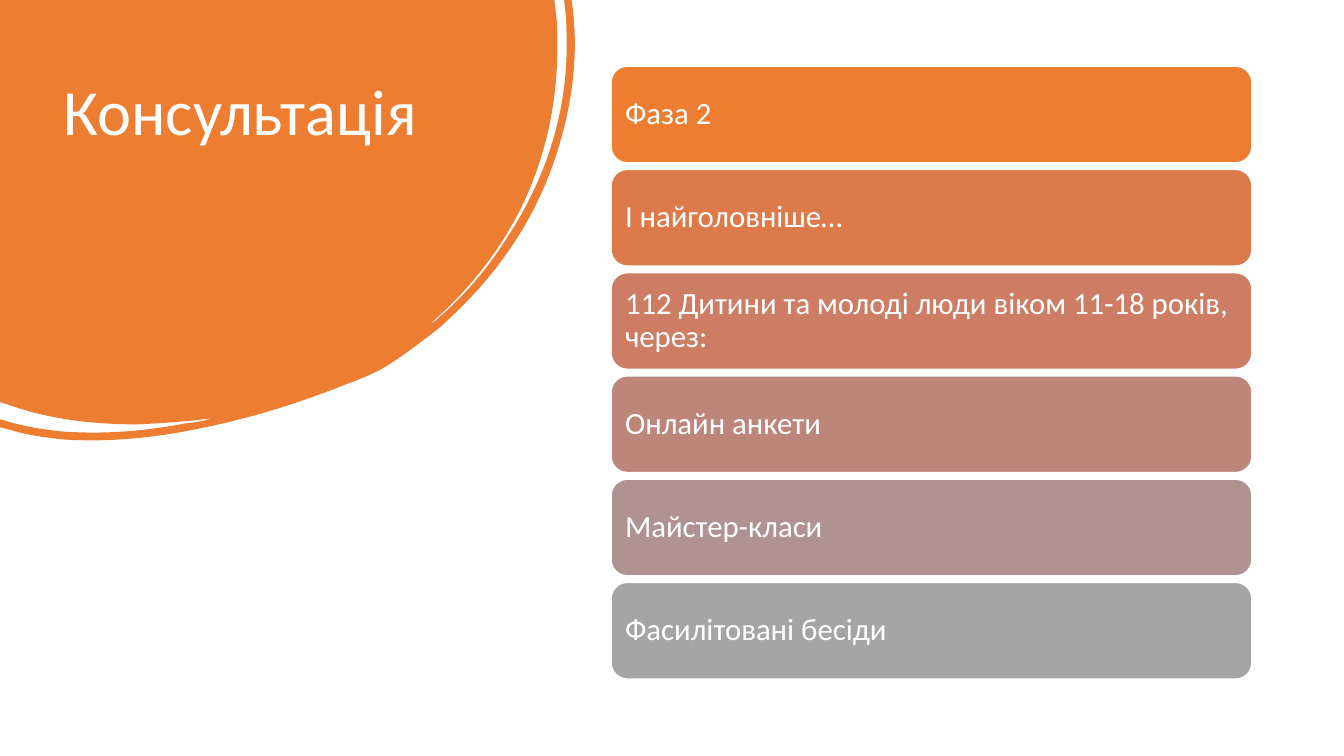
"""Build the consultation slide: a brushed orange corner, a title and a stack of six cards."""
from lxml.etree import SubElement
from pptx import Presentation
from pptx.dml.color import RGBColor
from pptx.enum.shapes import MSO_SHAPE
from pptx.enum.text import MSO_ANCHOR, MSO_AUTO_SIZE, PP_ALIGN
from pptx.oxml.ns import qn
from pptx.util import Pt

ORANGE, WHITE = "ED7D31", "FFFFFF"
OUTLINE_UNIT = 0.72
CORNER_WIDTH, CORNER_HEIGHT = 411, 314.5

CORNER_OUTLINE = [
    (0, 0), (550, 0), (552, 17),
    (553, 26, 553, 36, 553, 45), (553, 101, 542, 154, 518, 204),
    (496, 249, 465, 288, 427, 321), (429, 321, 430, 319, 432, 318),
    (459, 295, 482, 269, 501, 239), (543, 176, 565, 107, 562, 30),
    (562, 21, 561, 12, 560, 3), (560, 0), (567, 0), (568, 7),
    (574, 54, 568, 102, 553, 150), (533, 214, 497, 268, 448, 314),
    (439, 323, 429, 331, 419, 338), (409, 346, 399, 353, 387, 361),
    (375, 369, 360, 375, 344, 381), (299, 399, 252, 414, 203, 424),
    (157, 434, 110, 439, 63, 436), (45, 434, 28, 432, 12, 427),
    (0, 424), (0, 416), (4, 417),
    (23, 423, 42, 426, 61, 428), (103, 431, 143, 428, 184, 420),
    (189, 420, 193, 419, 198, 418), (202, 418, 206, 416, 210, 415),
    (186, 418, 161, 420, 136, 421), (92, 421, 48, 416, 7, 401),
    (0, 399),
]

CARDS = [
    ("Фаза 2", ORANGE),
    ("І найголовніше…", "DC7A4B"),
    ("112 Дитини та молоді люди віком 11-18 років, через:", "CC7D64"),
    ("Онлайн анкети", "BD867B"),
    ("Майстер-класи", "B09391"),
    ("Фасилітовані бесіди", "A5A5A5"),
]
CARD_LEFT, CARD_TOP, CARD_WIDTH, CARD_HEIGHT = 436.5, 47.3, 457.7, 69
CARD_PITCH = 73.75


def color(hex_value):
    return RGBColor.from_string(hex_value)


def apply_format(target, values):
    for name, value in values.items():
        setattr(target, name, value)


def fill_shape(shape, hex_value):
    shape.shadow.inherit = False
    shape.fill.solid()
    shape.fill.fore_color.rgb = color(hex_value)


def write_text(shape, text, size, frame_format):
    frame = shape.text_frame
    frame.text = text
    apply_format(frame, {"word_wrap": True, "auto_size": MSO_AUTO_SIZE.NONE, **frame_format})
    paragraph = frame.paragraphs[0]
    apply_format(paragraph, {"alignment": PP_ALIGN.LEFT, "line_spacing": 0.9})
    font = paragraph.runs[0].font
    apply_format(font, {"name": "Calibri", "size": Pt(size)})
    font.color.rgb = color(WHITE)


def bend_segments(shape, outline):
    outline_path = next(shape._element.iter(qn("a:path")))
    outline_path.set("w", str(Pt(CORNER_WIDTH)))
    outline_path.set("h", str(Pt(CORNER_HEIGHT)))
    lines = outline_path.findall(qn("a:lnTo"))
    for line, segment in zip(lines, outline[1:]):
        if len(segment) == 6:
            curve = SubElement(outline_path, qn("a:cubicBezTo"))
            for x, y in zip(segment[::2], segment[1::2]):
                SubElement(curve, qn("a:pt"), x=str(Pt(x * OUTLINE_UNIT)),
                           y=str(Pt(y * OUTLINE_UNIT)))
            outline_path.replace(line, curve)


def add_corner(slide):
    start, *ends = [(Pt(segment[-2] * OUTLINE_UNIT), Pt(segment[-1] * OUTLINE_UNIT))
                    for segment in CORNER_OUTLINE]
    builder = slide.shapes.build_freeform(*start)
    builder.add_line_segments(ends, close=True)
    corner = builder.convert_to_shape()
    bend_segments(corner, CORNER_OUTLINE)
    apply_format(corner, {"width": Pt(CORNER_WIDTH), "height": Pt(CORNER_HEIGHT)})
    fill_shape(corner, ORANGE)
    corner.line.fill.background()


def add_title(slide, text):
    title = slide.shapes.title
    apply_format(title, {"left": Pt(38.2), "top": Pt(53.3),
                         "width": Pt(281.5), "height": Pt(159.8)})
    write_text(title, text, 46, {"vertical_anchor": MSO_ANCHOR.TOP})
    slide.shapes._spTree.append(title._element)


def add_card(slide, index, text, hex_value):
    card = slide.shapes.add_shape(
        MSO_SHAPE.ROUNDED_RECTANGLE, Pt(CARD_LEFT), Pt(CARD_TOP + index * CARD_PITCH),
        Pt(CARD_WIDTH), Pt(CARD_HEIGHT))
    fill_shape(card, hex_value)
    card.line.color.rgb = color(WHITE)
    card.line.width = Pt(1)
    margins = {f"margin_{side}": Pt(6.6) for side in ("left", "right", "top", "bottom")}
    write_text(card, text, 22, {"vertical_anchor": MSO_ANCHOR.MIDDLE, **margins})


def main():
    presentation = Presentation()
    apply_format(presentation, {"slide_width": Pt(960), "slide_height": Pt(540)})
    slide = presentation.slides.add_slide(presentation.slide_layouts[5])
    add_corner(slide)
    add_title(slide, "Консультація")
    for index, (text, hex_value) in enumerate(CARDS):
        add_card(slide, index, text, hex_value)
    presentation.save("out.pptx")


if __name__ == "__main__":
    main()
